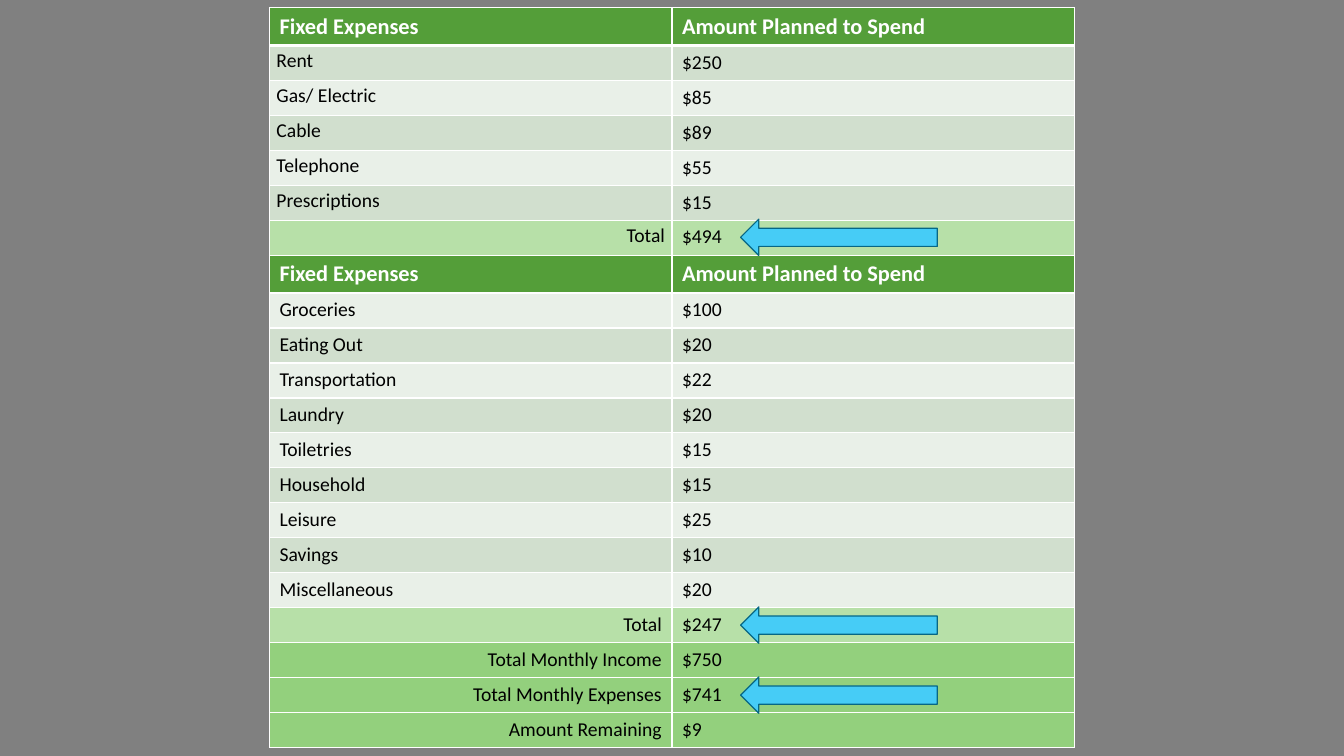
from pptx import Presentation
from pptx.dml.color import RGBColor as Rgb
from pptx.enum.shapes import MSO_SHAPE as Shape
from pptx.enum.text import PP_ALIGN as Align
from pptx.oxml.ns import qn
from pptx.util import Pt
from lxml.etree import SubElement as Sub

PX = 6350  # 144 px to the inch
LEFT, TOP, COL = 385, 11, 575
HEAD, ROW = 54, 50

COLORS = {
    "back": "808080", "head": "549E39", "dark": "D1DFCE", "light": "E9F0E8",
    "total": "B7E0A8", "sum": "93D07D", "white": "FFFFFF", "black": "000000",
    "arrow": "46CCF6", "edge": "076785",
}

TITLE = ("head", "Fixed Expenses", "Amount Planned to Spend")
FIXED = [("Rent", "$250"), ("Gas/ Electric", "$85"), ("Cable", "$89"),
         ("Telephone", "$55"), ("Prescriptions", "$15")]
LIVING = [("Groceries", "$100"), ("Eating Out", "$20"),
          ("Transportation", "$22"), ("Laundry", "$20"), ("Toiletries", "$15"),
          ("Household", "$15"), ("Leisure", "$25"), ("Savings", "$10"),
          ("Miscellaneous", "$20")]
SUMS = [("Total Monthly Income", "$750"), ("Total Monthly Expenses", "$741"),
        ("Amount Remaining", "$9")]
MARKED = ("$247", "$494", "$741")


def color(name):
    return Rgb.from_string(COLORS[name])


def band(items, kinds):
    return [(kinds[i % 2], *item) for i, item in enumerate(items)]


def border(cell, row):
    props = cell._tc.get_or_add_tcPr()
    for side in "LRTB":
        thick = (row, side) in ((0, "B"), (1, "T"))
        line = Sub(props, qn("a:ln" + side), w=str(Pt(3 if thick else 1)))
        fill = Sub(line, qn("a:solidFill"))
        Sub(fill, qn("a:srgbClr"), val=COLORS["white"])


def write(cell, text, kind, right, tight):
    cell.fill.solid()
    cell.fill.fore_color.rgb = color(kind)
    para = cell.text_frame.paragraphs[0]
    para.alignment = Align.RIGHT if right else Align.LEFT
    if tight:
        cell.margin_left = cell.margin_right = 10 * PX
        cell.margin_top = cell.margin_bottom = 0
        para.line_spacing = 1.15
        para.space_before = para.space_after = Pt(3)
    run = para.add_run()
    run.text = text
    font = run.font
    head = kind == "head"
    font.name, font.size, font.bold = "Calibri", Pt(16 if head else 14), head
    font.color.rgb = color("white" if head else "black")


def add_budget(slide, rows):
    sizes = [HEAD if kind == "head" else ROW for kind, *_ in rows]
    frame = slide.shapes.add_table(len(rows), 2, LEFT * PX, TOP * PX,
                                   2 * COL * PX, sum(sizes) * PX)
    table = frame.table
    for col in table.columns:
        col.width = COL * PX
    for i, (kind, *texts) in enumerate(rows):
        table.rows[i].height = sizes[i] * PX
        for j, text in enumerate(texts):
            cell = table.cell(i, j)
            border(cell, i)
            right = j == 0 and kind in ("total", "sum")
            tight = j == 0 and 1 <= i <= len(FIXED) + 1
            write(cell, text, kind, right, tight)
    return sizes


def add_arrow(slide, top):
    arrow = slide.shapes.add_shape(Shape.LEFT_ARROW, 1058 * PX, top * PX,
                                   281 * PX, 52 * PX)
    arrow.shadow.inherit = False
    arrow.fill.solid()
    arrow.fill.fore_color.rgb = color("arrow")
    arrow.line.color.rgb = color("edge")
    arrow.line.width = Pt(0.85)


def main():
    deck = Presentation()
    deck.slide_width, deck.slide_height = 1920 * PX, 1080 * PX
    slide = deck.slides.add_slide(deck.slide_layouts[6])
    back = slide.background.fill
    back.solid()
    back.fore_color.rgb = color("back")

    # Budget table
    rows = [TITLE, *band(FIXED, ("dark", "light")), ("total", "Total", "$494"),
            TITLE, *band(LIVING, ("light", "dark")), ("total", "Total", "$247"),
            *band(SUMS, ("sum", "sum"))]
    sizes = add_budget(slide, rows)

    # Arrows at the key amounts
    amounts = [row[2] for row in rows]
    for amount in MARKED:
        add_arrow(slide, TOP + sum(sizes[:amounts.index(amount)]) - 2)

    deck.save("out.pptx")


if __name__ == "__main__":
    main()
